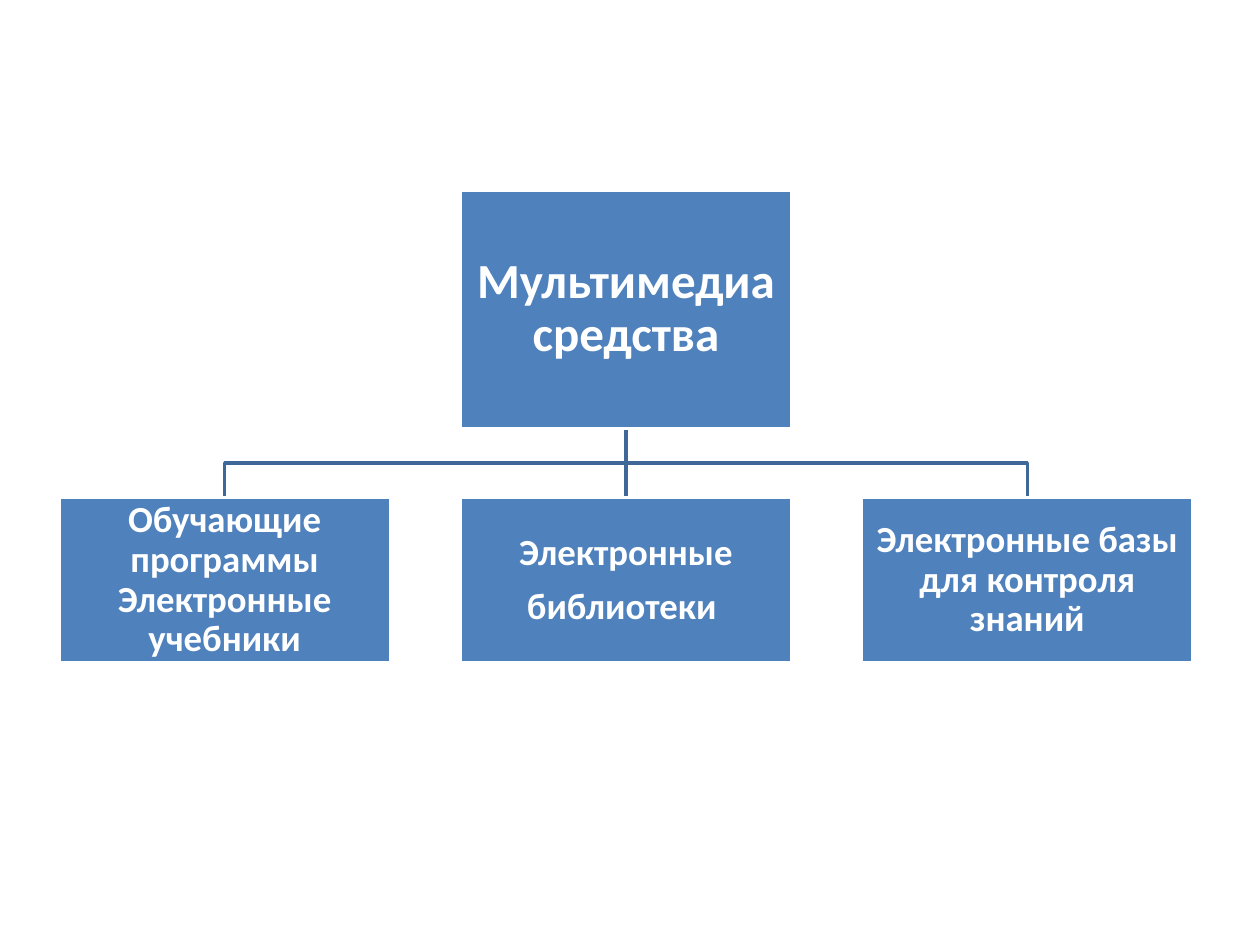
from dataclasses import dataclass

from lxml.etree import SubElement
from pptx import Presentation
from pptx.dml.color import RGBColor
from pptx.enum.shapes import MSO_CONNECTOR as CONN, MSO_SHAPE as SHAPE
from pptx.enum.text import MSO_ANCHOR as ANCHOR, PP_ALIGN as ALIGN
from pptx.oxml.ns import qn
from pptx.shapes.autoshape import Shape
from pptx.shapes.connector import Connector
from pptx.slide import Slide
from pptx.util import Cm, Pt

BLUE = RGBColor(0x4F, 0x81, 0xBD)
DARK_BLUE = RGBColor(0x3F, 0x67, 0x97)
WHITE = RGBColor(0xFF, 0xFF, 0xFF)

BOX_W = 6.68
LEFT = 1.19
PITCH = 8.09
CHILD_TOP = 10.03
CHILD_H = 3.34


@dataclass
class Box:
    text: str
    left: float
    top: float
    height: float
    size: int
    inset: float

    @property
    def center(self) -> float:
        return self.left + BOX_W / 2

    @property
    def bottom(self) -> float:
        return self.top + self.height


def draw_box(s: Slide, box: Box) -> Shape:
    sp = s.shapes.add_shape(
        SHAPE.RECTANGLE, Cm(box.left), Cm(box.top), Cm(BOX_W), Cm(box.height)
    )
    sp.shadow.inherit = False
    sp.fill.solid()
    sp.fill.fore_color.rgb = BLUE
    sp.line.color.rgb = WHITE
    sp.line.width = Pt(2)
    tf = sp.text_frame
    tf.word_wrap = True
    tf.vertical_anchor = ANCHOR.MIDDLE
    tf.margin_left = tf.margin_right = Cm(box.inset)
    tf.margin_top = tf.margin_bottom = Cm(box.inset)
    tf.text = box.text
    for i, p in enumerate(tf.paragraphs):
        p.alignment = ALIGN.CENTER
        p.line_spacing = 0.9
        p.space_before = Pt(0.4 * box.size if i else 0)
        for r in p.runs:
            r.font.name = "Calibri"
            r.font.size = Pt(box.size)
            r.font.bold = True
            r.font.color.rgb = WHITE
    return sp


def draw_elbow(s: Slide, parent: Box, child: Box) -> None:
    middle = (parent.bottom + child.top) / 2
    builder = s.shapes.build_freeform(Cm(parent.center), Cm(parent.bottom))
    corners = [
        (parent.center, middle),
        (child.center, middle),
        (child.center, child.top),
    ]
    builder.add_line_segments([(Cm(x), Cm(y)) for x, y in corners], close=False)
    sp = builder.convert_to_shape()
    sp.shadow.inherit = False
    sp.fill.background()
    sp.line.color.rgb = DARK_BLUE
    sp.line.width = Pt(2)


def draw_straight(s: Slide, parent: Box, child: Box) -> Connector:
    cxn = s.shapes.add_connector(
        CONN.STRAIGHT,
        Cm(parent.center), Cm(parent.bottom), Cm(child.center), Cm(child.top),
    )
    cxn.line.color.rgb = DARK_BLUE
    cxn.line.width = Pt(2)
    SubElement(cxn.line._ln.getparent(), qn("a:effectLst"))
    return cxn


def main() -> None:
    prs = Presentation()
    prs.slide_width, prs.slide_height = Cm(25.4), Cm(19.05)
    s = prs.slides.add_slide(prs.slide_layouts[6])

    root = Box("Мультимедиа средства", LEFT + PITCH, 3.84, 4.8, 28, 0.05)
    texts = [
        "Обучающие программы Электронные учебники",
        "Электронные\nбиблиотеки ",
        "Электронные базы для контроля знаний",
    ]
    children = [
        Box(text, LEFT + i * PITCH, CHILD_TOP, CHILD_H, 21, 0.03)
        for i, text in enumerate(texts)
    ]
    first, second, third = children

    draw_elbow(s, root, third)
    cxn = draw_straight(s, root, second)
    draw_elbow(s, root, first)

    root_sp = draw_box(s, root)
    child_sps = [draw_box(s, child) for child in children]
    cxn.begin_connect(root_sp, 2)
    cxn.end_connect(child_sps[1], 0)

    prs.save("out.pptx")


if __name__ == "__main__":
    main()
